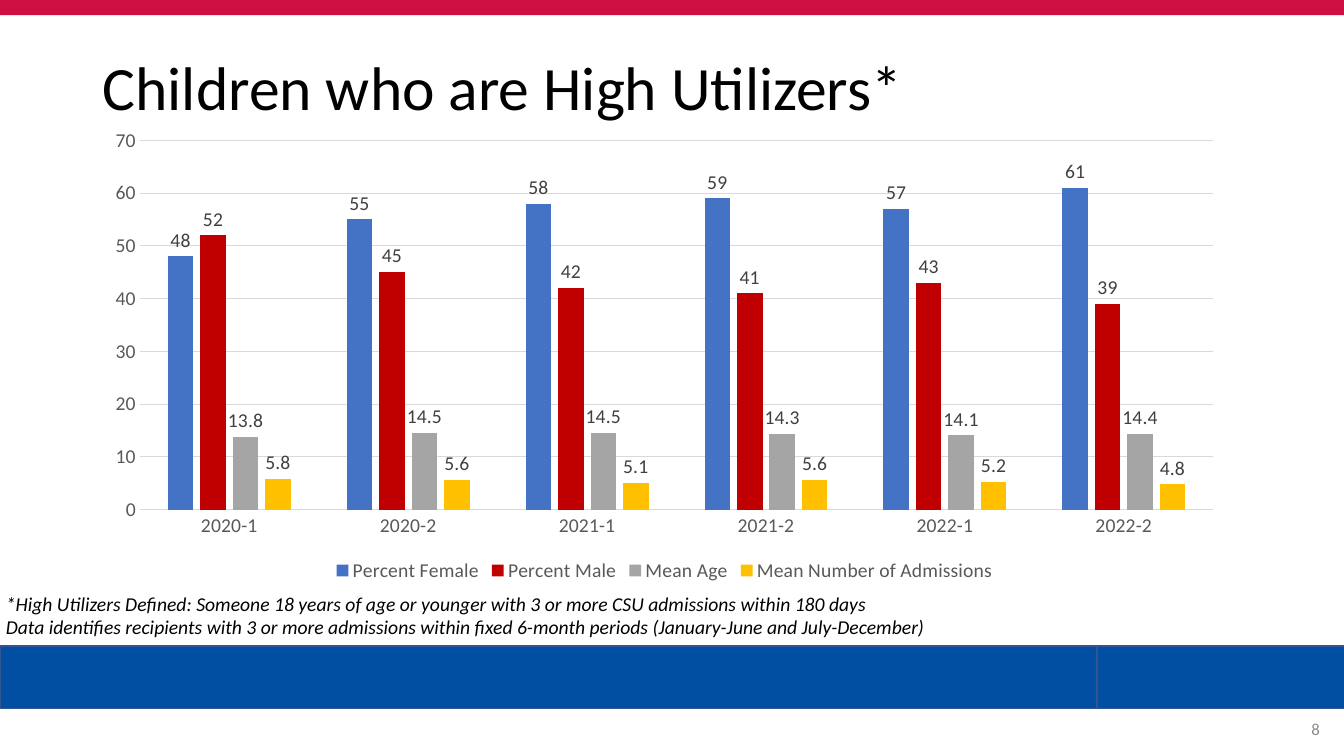
from dataclasses import dataclass
from typing import Optional

from pptx import Presentation
from pptx.chart.data import CategoryChartData
from pptx.dml.color import RGBColor
from pptx.enum.chart import XL_CHART_TYPE, XL_LABEL_POSITION, XL_LEGEND_POSITION, XL_TICK_MARK
from pptx.enum.shapes import MSO_SHAPE
from pptx.enum.text import MSO_ANCHOR, PP_ALIGN
from pptx.slide import Slide
from pptx.text.text import Font
from pptx.util import Inches, Pt

FONT = "Calibri"
BLACK = RGBColor(0x00, 0x00, 0x00)
NUMBER_GRAY = RGBColor(0x8C, 0x8C, 0x8C)
AXIS_GRAY = RGBColor(0x59, 0x59, 0x59)
LABEL_GRAY = RGBColor(0x40, 0x40, 0x40)
GRID_GRAY = RGBColor(0xD9, 0xD9, 0xD9)
BAND_RED = RGBColor(0xCD, 0x10, 0x41)
BAND_BLUE = RGBColor(0x00, 0x4F, 0xA2)
BAND_EDGE = RGBColor(0x32, 0x54, 0x91)


@dataclass
class Band:
    left: float
    top: float
    width: float
    height: float
    fill: RGBColor
    edge: Optional[RGBColor] = None


@dataclass
class Measure:
    name: str
    values: tuple[float, ...]
    color: RGBColor


BANDS = [
    Band(0, 6.41, 11.22, 0.62, BAND_BLUE, BAND_EDGE),
    Band(10.88, 6.41, 2.49, 0.62, BAND_BLUE, BAND_EDGE),
    Band(0, 0, 13.38, 0.15, BAND_RED),
]
PERIODS = [f"{year}-{half}" for year in (2020, 2021, 2022) for half in (1, 2)]
MEASURES = [
    Measure("Percent Female", (48, 55, 58, 59, 57, 61), RGBColor(0x44, 0x72, 0xC4)),
    Measure("Percent Male", (52, 45, 42, 41, 43, 39), RGBColor(0xC0, 0x00, 0x00)),
    Measure("Mean Age", (13.8, 14.5, 14.5, 14.3, 14.1, 14.4), RGBColor(0xA5, 0xA5, 0xA5)),
    Measure("Mean Number of Admissions", (5.8, 5.6, 5.1, 5.6, 5.2, 4.8), RGBColor(0xFF, 0xC0, 0x00)),
]
DEFINITION = (
    "*High Utilizers Defined: Someone 18 years of age or younger with 3 or more CSU admissions within 180 days\n"
    "Data identifies recipients with 3 or more admissions within fixed 6-month periods "
    "(January-June and July-December)"
)


def set_font(font: Font, size: float, color: RGBColor, italic: bool = False) -> None:
    font.name = FONT
    font.size = Pt(size)
    font.color.rgb = color
    font.italic = italic


def add_text(slide: Slide, text: str, left: float, top: float, width: float, height: float, *,
             size: float, color: RGBColor = BLACK, italic: bool = False,
             align: PP_ALIGN = PP_ALIGN.LEFT, anchor: MSO_ANCHOR = MSO_ANCHOR.MIDDLE,
             line_spacing: float = 1.0) -> None:
    box = slide.shapes.add_textbox(Inches(left), Inches(top), Inches(width), Inches(height))
    frame = box.text_frame
    frame.word_wrap = True
    frame.vertical_anchor = anchor
    frame.text = text
    for paragraph in frame.paragraphs:
        paragraph.alignment = align
        paragraph.line_spacing = line_spacing
        for run in paragraph.runs:
            set_font(run.font, size, color, italic)


def add_band(slide: Slide, band: Band) -> None:
    bar = slide.shapes.add_shape(MSO_SHAPE.RECTANGLE, Inches(band.left), Inches(band.top),
                                 Inches(band.width), Inches(band.height))
    bar.shadow.inherit = False
    bar.fill.solid()
    bar.fill.fore_color.rgb = band.fill
    if band.edge is None:
        bar.line.fill.background()
    else:
        bar.line.color.rgb = band.edge
        bar.line.width = Pt(1)


def add_utilizer_chart(slide: Slide) -> None:
    data = CategoryChartData()
    data.categories = PERIODS
    for measure in MEASURES:
        data.add_series(measure.name, measure.values)
    chart = slide.shapes.add_chart(XL_CHART_TYPE.COLUMN_CLUSTERED, Inches(0.92), Inches(1.18),
                                   Inches(11.34), Inches(4.64), data).chart
    set_font(chart.font, 14, BLACK)
    chart.has_title = False
    chart.has_legend = True
    chart.legend.position = XL_LEGEND_POSITION.BOTTOM
    chart.legend.include_in_layout = False
    set_font(chart.legend.font, 14, AXIS_GRAY)

    # Axes and gridlines
    periods, scale = chart.category_axis, chart.value_axis
    for axis in (periods, scale):
        axis.major_tick_mark = XL_TICK_MARK.NONE
        axis.minor_tick_mark = XL_TICK_MARK.NONE
        set_font(axis.tick_labels.font, 14, AXIS_GRAY)
    scale.format.line.fill.background()
    scale.has_major_gridlines = True
    for line in (periods.format.line, scale.major_gridlines.format.line):
        line.color.rgb = GRID_GRAY
        line.width = Pt(0.75)
    scale.minimum_scale, scale.maximum_scale, scale.major_unit = 0, 70, 10

    # Columns and their values
    plot = chart.plots[0]
    plot.vary_by_categories = False
    plot.gap_width = 219
    plot.overlap = -27
    for columns, measure in zip(plot.series, MEASURES):
        columns.format.fill.solid()
        columns.format.fill.fore_color.rgb = measure.color
        labels = columns.data_labels
        labels.show_value = True
        labels.position = XL_LABEL_POSITION.OUTSIDE_END
        set_font(labels.font, 14, LABEL_GRAY)


def main() -> None:
    presentation = Presentation()
    presentation.slide_width = Inches(13.33)
    presentation.slide_height = Inches(7.5)
    slide = presentation.slides.add_slide(presentation.slide_layouts[6])

    # Coloured bands
    for band in BANDS:
        add_band(slide, band)

    # Title, slide number and definition
    add_text(slide, "Children who are High Utilizers*", 0.92, 0.17, 11.5, 1.45, size=44, line_spacing=0.9)
    add_text(slide, "8", 10.19, 7.03, 3, 0.4, size=12, color=NUMBER_GRAY, align=PP_ALIGN.RIGHT)
    add_text(slide, DEFINITION, -0.04, 5.82, 13.33, 0.81, size=14, italic=True, anchor=MSO_ANCHOR.TOP)

    add_utilizer_chart(slide)
    presentation.save("out.pptx")


if __name__ == "__main__":
    main()
